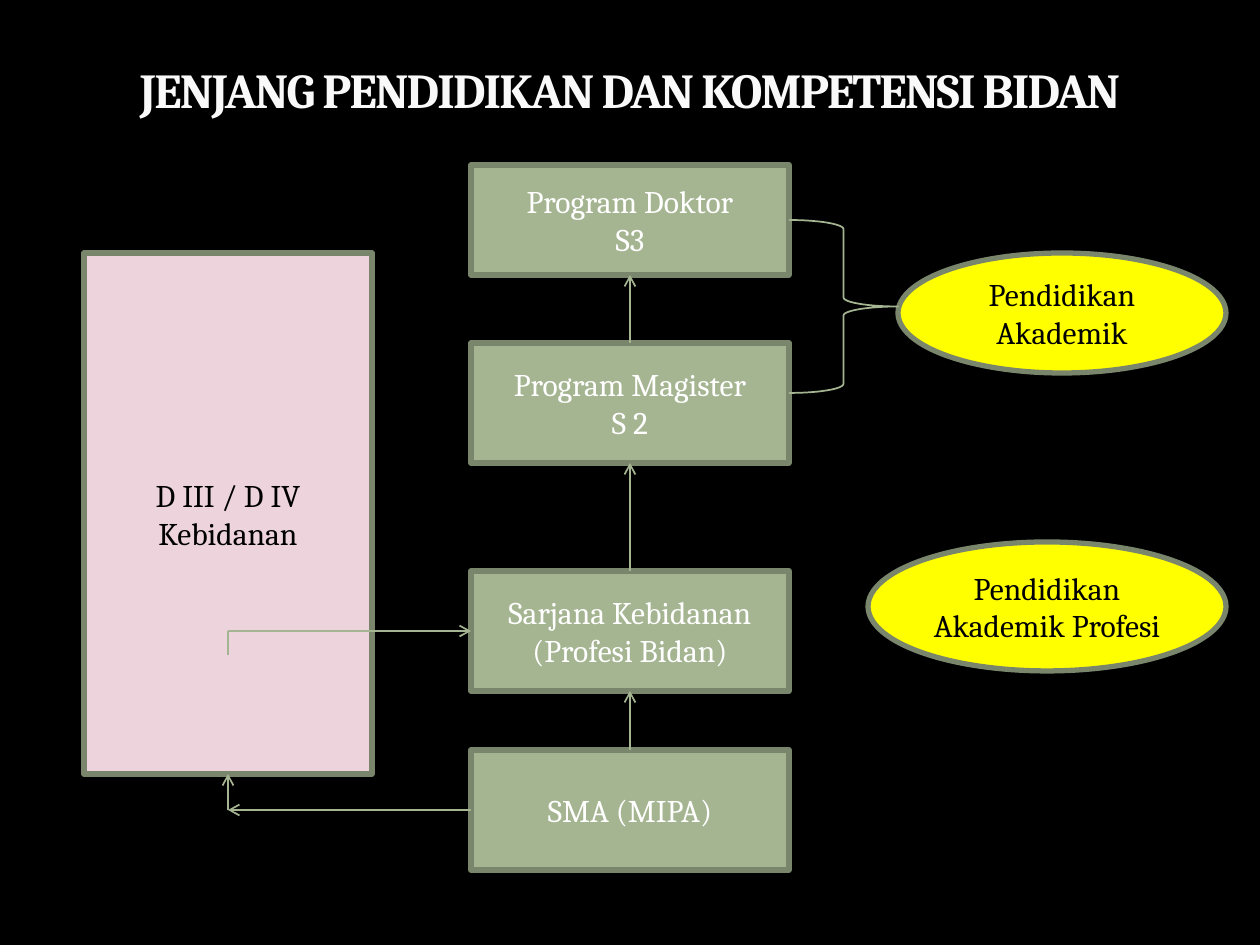
from lxml import etree
from pptx import Presentation, util as u
from pptx.dml.color import RGBColor
from pptx.enum import shapes, text
from pptx.oxml.ns import qn

BLACK = RGBColor(0x00, 0x00, 0x00)
WHITE = RGBColor(0xFF, 0xFF, 0xFF)
OFF_WHITE = RGBColor(0xF9, 0xF9, 0xF9)
SAGE = RGBColor(0xA5, 0xB5, 0x92)
DARK_SAGE = RGBColor(0x7A, 0x86, 0x6C)
PINK = RGBColor(0xEC, 0xD3, 0xDC)
YELLOW = RGBColor(0xFF, 0xFF, 0x00)
FONT = "Cambria"
RECT = shapes.MSO_SHAPE.RECTANGLE
OVAL = shapes.MSO_SHAPE.OVAL
TOP, LEFT, BOTTOM, RIGHT = range(4)


def px(*values):
    """Turn pixels (126 to the inch) into EMU."""
    return [u.Emu(round(v * 914400 / 126)) for v in values]


prs = Presentation()
prs.slide_width, prs.slide_height = px(1260, 945)
s = prs.slides.add_slide(prs.slide_layouts[6])
s.background.fill.solid()
s.background.fill.fore_color.rgb = BLACK

# Title
tf = s.shapes.add_textbox(*px(63, 47, 1134, 78)).text_frame
tf.word_wrap = True
tf.vertical_anchor = text.MSO_ANCHOR.BOTTOM
p = tf.paragraphs[0]
p.alignment = text.PP_ALIGN.CENTER
r = p.add_run()
r.text = "JENJANG PENDIDIKAN DAN KOMPETENSI BIDAN"
r.font.name, r.font.size, r.font.bold = FONT, u.Pt(27.9), True
r.font.color.rgb = OFF_WHITE
r.font._element.set("spc", "-100")

# Education levels: name, shape, box, fill, text colour, lines of text
levels = [
    ("s3", RECT, (471, 165, 318, 110), SAGE, WHITE, ["Program Doktor", "S3"]),
    ("s2", RECT, (471, 343, 318, 120), SAGE, WHITE, ["Program Magister", "S 2"]),
    ("s1", RECT, (471, 571, 318, 120), SAGE, WHITE, ["Sarjana Kebidanan", "(Profesi Bidan)"]),
    ("sma", RECT, (471, 750, 318, 120), SAGE, WHITE, ["SMA (MIPA)"]),
    ("diploma", RECT, (84, 253, 288, 521), PINK, BLACK, ["D III / D IV Kebidanan"]),
    ("academic", OVAL, (898, 253, 328, 120), YELLOW, BLACK, ["Pendidikan Akademik"]),
    ("professional", OVAL, (868, 542, 358, 129), YELLOW, BLACK, ["Pendidikan Akademik Profesi"]),
]
nodes = {}
for name, kind, box, fill, color, lines in levels:
    sp = nodes[name] = s.shapes.add_shape(kind, *px(*box))
    sp.shadow.inherit = False
    sp.fill.solid()
    sp.fill.fore_color.rgb = fill
    sp.line.color.rgb = DARK_SAGE
    sp.line.width = u.Pt(3)
    tf = sp.text_frame
    tf.word_wrap = True
    tf.vertical_anchor = text.MSO_ANCHOR.MIDDLE
    tf.text = "\n".join(lines)
    for p in tf.paragraphs:
        p.alignment = text.PP_ALIGN.CENTER
        p.font.name, p.font.size = FONT, u.Pt(18)
        p.font.color.rgb = color

# Paths: ends in px, joined start, joined end, arrowhead
paths = [
    ((471, 810, 228, 810), ("sma", LEFT), None, True),
    ((228, 810, 228, 774), None, ("diploma", BOTTOM), True),
    ((228, 655, 228, 631), None, None, False),
    ((228, 631, 471, 631), None, ("s1", LEFT), True),
    ((630, 750, 630, 691), ("sma", TOP), ("s1", BOTTOM), True),
    ((630, 571, 630, 463), ("s1", TOP), ("s2", BOTTOM), True),
    ((630, 343, 630, 275), ("s2", TOP), ("s3", BOTTOM), True),
]
for ends, start, end, arrow in paths:
    c = s.shapes.add_connector(shapes.MSO_CONNECTOR.STRAIGHT, *px(*ends))
    c.line.color.rgb = SAGE
    c.line.width = u.Pt(1)
    if start:
        c.begin_connect(nodes[start[0]], start[1])
    if end:
        c.end_connect(nodes[end[0]], end[1])
    if arrow:
        etree.SubElement(c.line._get_or_add_ln(), qn("a:tailEnd"), type="arrow")
    etree.SubElement(c._element.spPr, qn("a:effectLst"))

# Brace joining the two academic programmes
brace = s.shapes.add_shape(shapes.MSO_SHAPE.RIGHT_BRACE, *px(789, 220, 109, 173))
brace.shadow.inherit = False
brace.fill.background()
brace.line.color.rgb = SAGE
brace.line.width = u.Pt(1)

prs.save("out.pptx")
